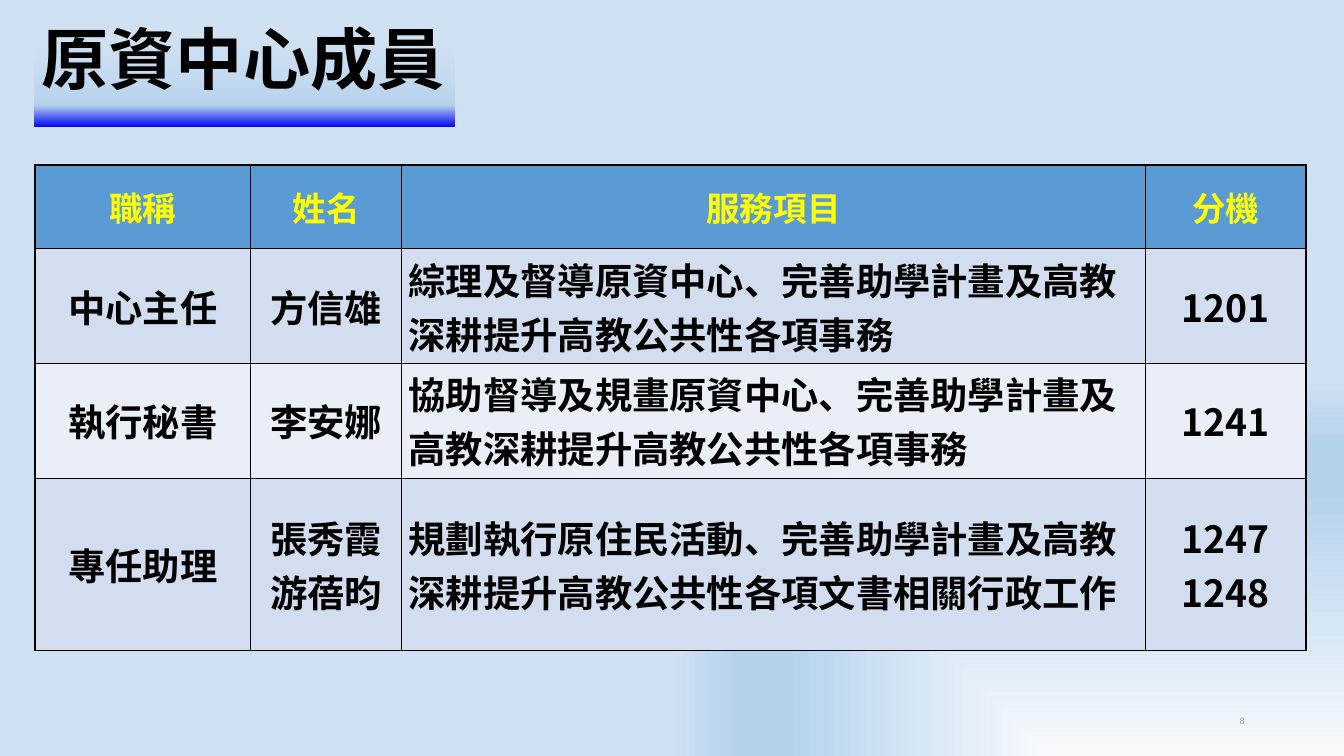
from dataclasses import dataclass

from lxml import etree
from pptx import Presentation
from pptx import util as u
from pptx.dml.color import RGBColor
from pptx.enum import shapes, text
from pptx.oxml import parse_xml
from pptx.oxml.ns import nsdecls, qn

W, H = u.Inches(20), u.Inches(11.25)
SANS, SERIF = "Noto Sans CJK SC", "Times New Roman"
BLACK = RGBColor(0x00, 0x00, 0x00)
YELLOW = RGBColor(0xFF, 0xFF, 0x00)
GREY = RGBColor(0x8C, 0x8C, 0x8C)
HEADER = RGBColor(0x5B, 0x9B, 0xD5)
BAND_DARK = RGBColor(0xD2, 0xDE, 0xEF)
BAND_LIGHT = RGBColor(0xEA, 0xEF, 0xF7)
BLUE = RGBColor(0x00, 0x00, 0xFF)
SKY = RGBColor(0xB5, 0xD2, 0xEC)
HAZE = RGBColor(0xE1, 0xEB, 0xFB)
FROST = RGBColor(0xF7, 0xFA, 0xFD)
MIST = RGBColor(0xCE, 0xE1, 0xF2)
LEFT, CENTER, RIGHT = text.PP_ALIGN.LEFT, text.PP_ALIGN.CENTER, text.PP_ALIGN.RIGHT
THIN, THICK = 1, 2.25


def across(share: float) -> int:
    return round(W * share / 100)


def down(share: float) -> int:
    return round(H * share / 100)


@dataclass(frozen=True)
class Box:
    left: float
    top: float
    width: float
    height: float

    def emu(self) -> tuple[int, int, int, int]:
        return across(self.left), down(self.top), across(self.width), down(self.height)


@dataclass(frozen=True)
class Stop:
    pos: int
    color: RGBColor
    alpha: int = 100


@dataclass(frozen=True)
class Column:
    width: float
    align: text.PP_ALIGN = CENTER


@dataclass(frozen=True)
class Member:
    title: str
    name: str
    duties: str
    extension: str
    height: float

    def cells(self) -> tuple[str, ...]:
        return self.title, self.name, self.duties, self.extension


TITLE = Box(2.6, 0, 31.2, 16.71)
TABLE = Box(2.6, 21.78, 94.6, 58.22)
NUMBER = Box(70.6, 92.71, 22.5, 5.33)
COLUMNS = [Column(16.05), Column(11.25), Column(55.3, LEFT), Column(12)]
ROWS = [
    Member("職稱", "姓名", "服務項目", "分機", 11.11),
    Member("中心主任", "方信雄", "綜理及督導原資中心、完善助學計畫及高教深耕提升高教公共性各項事務", "1201", 12.18),
    Member("執行秘書", "李安娜", "協助督導及規畫原資中心、完善助學計畫及高教深耕提升高教公共性各項事務", "1241", 12.18),
    Member("專任助理", "張秀霞\v游蓓昀", "規劃執行原住民活動、完善助學計畫及高教深耕提升高教公共性各項文書相關行政工作",
           "1247\v1248", 22.76),
]


def put_text(tf, content: str, *, size: float, color: RGBColor, font: str = SANS,
             bold: bool = False, align=LEFT, spacing: float | None = None) -> None:
    tf.word_wrap = True
    tf.vertical_anchor = text.MSO_ANCHOR.MIDDLE
    p = tf.paragraphs[0]
    p.text = content
    p.alignment = align
    p.line_spacing = spacing
    for r in p.runs:
        r.font.size, r.font.bold, r.font.name = u.Pt(size), bold, font
        r.font.color.rgb = color
        etree.SubElement(r.font._element, qn("a:ea")).set("typeface", font)


def put_gradient(parent, stops: list[Stop], shading: str) -> None:
    marks = "".join(
        f'<a:gs pos="{s.pos * 1000}"><a:srgbClr val="{s.color}">'
        f'<a:alpha val="{s.alpha * 1000}"/></a:srgbClr></a:gs>' for s in stops)
    grad = parse_xml(f'<a:gradFill {nsdecls("a")} rotWithShape="1">'
                     f'<a:gsLst>{marks}</a:gsLst>{shading}</a:gradFill>')
    solid = parent.find(qn("a:solidFill"))
    parent.replace(solid, grad)


def put_borders(cell, **widths: float) -> None:
    tc_pr = cell._tc.get_or_add_tcPr()
    for i, (side, width) in enumerate(widths.items()):
        tc_pr.insert(i, parse_xml(
            f'<a:ln{side} {nsdecls("a")} w="{u.Pt(width)}"><a:solidFill>'
            f'<a:srgbClr val="{BLACK}"/></a:solidFill></a:ln{side}>'))


def add_background(s) -> None:
    s.background.fill.solid()
    put_gradient(s._element.cSld.find(qn("p:bg")).find(qn("p:bgPr")),
                 [Stop(0, FROST), Stop(70, SKY), Stop(82, SKY), Stop(100, MIST)],
                 '<a:path path="rect"><a:fillToRect l="100000" t="100000"/></a:path>')


def add_title(s) -> None:
    sp = s.shapes.add_shape(shapes.MSO_SHAPE.RECTANGLE, *TITLE.emu())
    sp.shadow.inherit = False
    sp.line.fill.background()
    sp.fill.solid()
    put_gradient(sp._element.spPr, [Stop(0, BLUE), Stop(17, SKY), Stop(100, HAZE, 0)],
                 '<a:lin ang="16200000" scaled="0"/>')
    put_text(sp.text_frame, "原資中心成員", size=72, color=BLACK, bold=True, spacing=0.9)


def add_members(s) -> None:
    table = s.shapes.add_table(len(ROWS), len(COLUMNS), *TABLE.emu()).table
    for column, spec_col in zip(table.columns, COLUMNS):
        column.width = across(spec_col.width)
    last = len(COLUMNS) - 1
    for i, member in enumerate(ROWS):
        table.rows[i].height = down(member.height)
        head = i == 0
        fill = HEADER if head else (BAND_DARK if i % 2 else BAND_LIGHT)
        for j, content in enumerate(member.cells()):
            cell = table.cell(i, j)
            cell.fill.solid()
            cell.fill.fore_color.rgb = fill
            cell.vertical_anchor = text.MSO_ANCHOR.MIDDLE
            put_borders(cell, L=THICK if j == 0 else THIN, R=THICK if j == last else THIN,
                        T=THICK if head else THIN, B=THIN)
            put_text(cell.text_frame, content, size=36 if head else 40,
                     color=YELLOW if head else BLACK, bold=True,
                     align=CENTER if head else COLUMNS[j].align)


def add_number(s) -> None:
    sp = s.shapes.add_textbox(*NUMBER.emu())
    put_text(sp.text_frame, "8", size=10.1, color=GREY, font=SERIF, align=RIGHT)


def main() -> None:
    prs = Presentation()
    prs.slide_width, prs.slide_height = W, H
    s = prs.slides.add_slide(prs.slide_layouts[6])
    add_background(s)
    add_members(s)
    add_title(s)
    add_number(s)
    prs.save("out.pptx")


if __name__ == "__main__":
    main()
